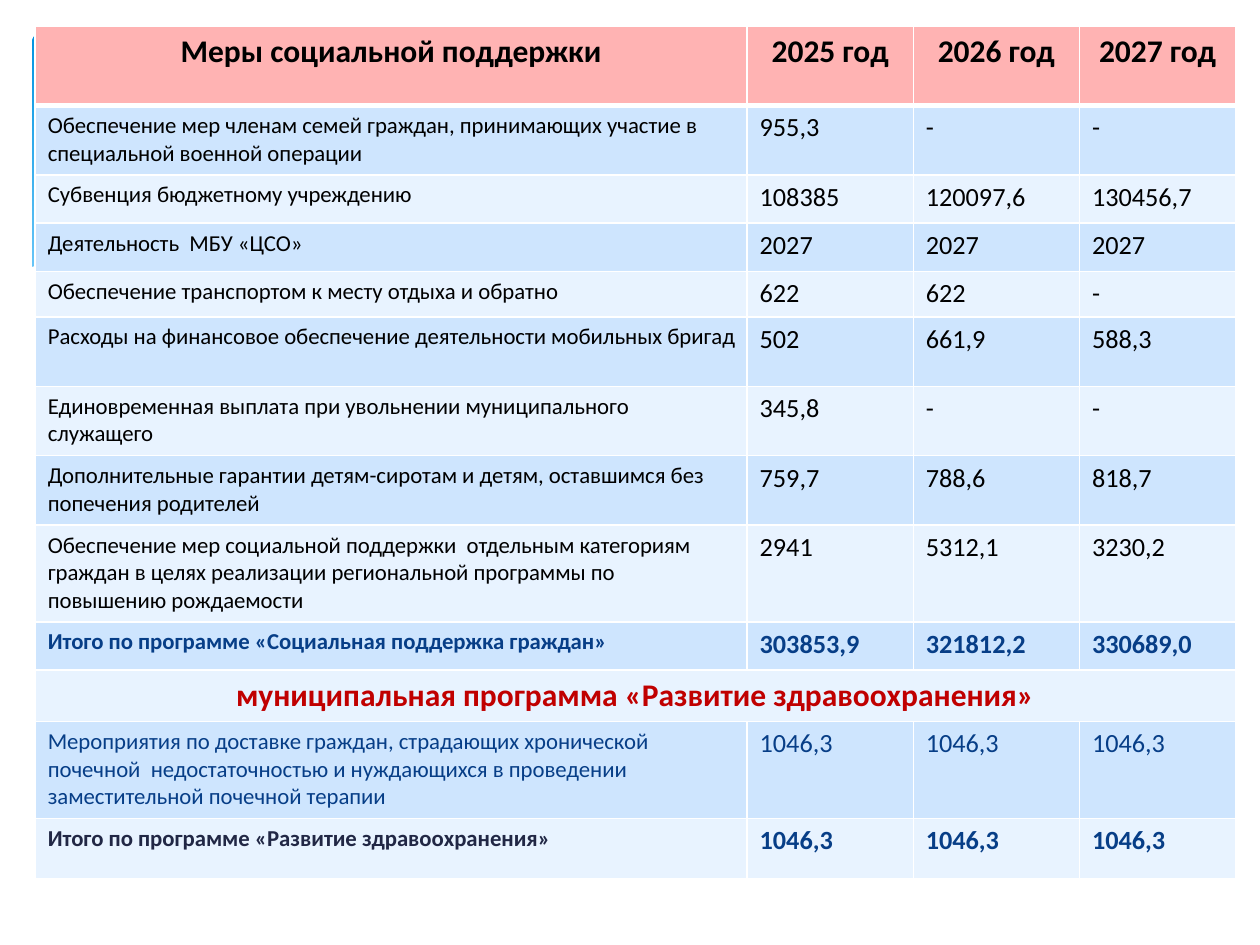
from lxml import etree
from pptx import Presentation
from pptx.dml.color import RGBColor
from pptx.enum.shapes import MSO_SHAPE
from pptx.enum.text import PP_ALIGN
from pptx.oxml.ns import qn
from pptx.util import Cm, Pt

ROUND = MSO_SHAPE.ROUNDED_RECTANGLE
LEFT, MID = PP_ALIGN.LEFT, PP_ALIGN.CENTER
FONT = "Calibri"
WHITE, BLACK, NAVY, DARK, RED = "FFFFFF", "000000", "073E87", "212745", "C00000"
PINK, BANDS = "FFB3B3", ("E8F3FF", "CEE5FE")

COLS = (14.35, 3.35, 3.35, 3.15)
HEAD = ("Меры социальной поддержки", "2025 год", "2026 год", "2027 год")
PLAIN = (BLACK, BLACK, False)
TOTAL = (NAVY, NAVY, True)
ROWS = (
    (1.4, PLAIN, "Обеспечение мер членам семей граждан, принимающих участие в специальной военной операции", "955,3", "-", "-"),
    (0.97, PLAIN, "Субвенция бюджетному учреждению", "108385", "120097,6", "130456,7"),
    (0.97, PLAIN, "Деятельность  МБУ «ЦСО»", "2027", "2027", "2027"),
    (0.92, PLAIN, "Обеспечение транспортом к месту отдыха и обратно", "622", "622", "-"),
    (1.4, PLAIN, "Расходы на финансовое обеспечение деятельности мобильных бригад", "502", "661,9", "588,3"),
    (1.4, PLAIN, "Единовременная выплата при увольнении муниципального служащего", "345,8", "-", "-"),
    (1.4, PLAIN, "Дополнительные гарантии детям-сиротам и детям, оставшимся без попечения родителей", "759,7", "788,6", "818,7"),
    (1.95, PLAIN, "Обеспечение мер социальной поддержки  отдельным категориям граждан в целях реализации региональной программы по повышению рождаемости", "2941", "5312,1", "3230,2"),
    (0.97, TOTAL, "Итого по программе «Социальная поддержка граждан»", "303853,9", "321812,2", "330689,0"),
    (1.04, (RED, RED, True), "муниципальная программа «Развитие здравоохранения»"),
    (1.95, (NAVY, NAVY, False), "Мероприятия по доставке граждан, страдающих хронической почечной  недостаточностью и нуждающихся в проведении заместительной почечной терапии", "1046,3", "1046,3", "1046,3"),
    (1.22, (DARK, NAVY, True), "Итого по программе «Развитие здравоохранения»", "1046,3", "1046,3", "1046,3"),
)
WAVE = ((0.58, 5.41), (1.5, 5.05), (3.02, 4.75), (4.9, 4.67), (7.42, 4.83),
        (11.35, 5.59), (15.32, 6.45), (18.44, 6.91), (21.26, 7.01),
        (23.37, 6.73), (24.82, 6.25), (24.82, 8.36), (0.58, 8.36))


def tint(code):
    return RGBColor.from_string(code)


class Page:
    def __init__(self, slide):
        self.slide = slide

    def panel(self, x, y, w, h, top, low):
        box = self.slide.shapes.add_shape(ROUND, Cm(x), Cm(y), Cm(w), Cm(h))
        box.adjustments[0] = 0.034
        box.shadow.inherit = False
        box.line.fill.background()
        box.fill.gradient()
        box.fill.gradient_angle = 270
        for stop, place, code in zip(box.fill.gradient_stops, (0, 0.9), (top, low)):
            stop.position = place
            stop.color.rgb = tint(code)

    def wave(self, points, code):
        spots = [(Cm(x), Cm(y)) for x, y in points]
        pen = self.slide.shapes.build_freeform(*spots[0])
        pen.add_line_segments(spots[1:], close=True)
        shape = pen.convert_to_shape()
        shape.shadow.inherit = False
        shape.line.fill.background()
        shape.fill.solid()
        shape.fill.fore_color.rgb = tint(code)

    def edges(self, cell, top, base):
        props = cell._tc.get_or_add_tcPr()
        for side, width in zip("LRTB", (1, 1, top, base)):
            line = etree.SubElement(props, qn("a:ln" + side), w=str(Pt(width)))
            fill = etree.SubElement(line, qn("a:solidFill"))
            etree.SubElement(fill, qn("a:srgbClr"), val=WHITE)

    def cell(self, cell, text, size, code, bold, align, back, top=1, base=1):
        self.edges(cell, top, base)
        cell.fill.solid()
        cell.fill.fore_color.rgb = tint(back)
        para = cell.text_frame.paragraphs[0]
        para.text = text
        para.alignment = align
        para.font.name = FONT
        para.font.size = Pt(size)
        para.font.bold = bold
        para.font.color.rgb = tint(code)

    def table(self, x, y, cols, head, rows):
        tall = [1.6] + [row[0] for row in rows]
        frame = self.slide.shapes.add_table(
            len(tall), len(cols), Cm(x), Cm(y), Cm(sum(cols)), Cm(sum(tall)))
        grid = frame.table
        for col, width in zip(grid.columns, cols):
            col.width = Cm(width)
        for row, height in zip(grid.rows, tall):
            row.height = Cm(height)
        for c, text in enumerate(head):
            self.cell(grid.cell(0, c), text, 18, BLACK, True, MID, PINK, base=3)
        for r, (_, (first, rest, bold), *texts) in enumerate(rows, 1):
            wide = len(texts) == 1
            if wide:
                grid.cell(r, 0).merge(grid.cell(r, len(cols) - 1))
            for c, text in enumerate(texts):
                size = 18 if wide else 15 if c else 13
                self.cell(grid.cell(r, c), text, size, rest if c else first, bold,
                          MID if wide else LEFT, BANDS[r % 2], top=3 if r == 1 else 1)


def main():
    deck = Presentation()
    deck.slide_width, deck.slide_height = Cm(25.4), Cm(19.05)
    page = Page(deck.slides.add_slide(deck.slide_layouts[6]))
    page.panel(0.64, 0.64, 24.16, 6.86, "0293E0", "83D3FE")
    page.wave(WAVE, WHITE)
    page.table(0.71, 0.53, COLS, HEAD, ROWS)
    deck.save("out.pptx")


if __name__ == "__main__":
    main()
